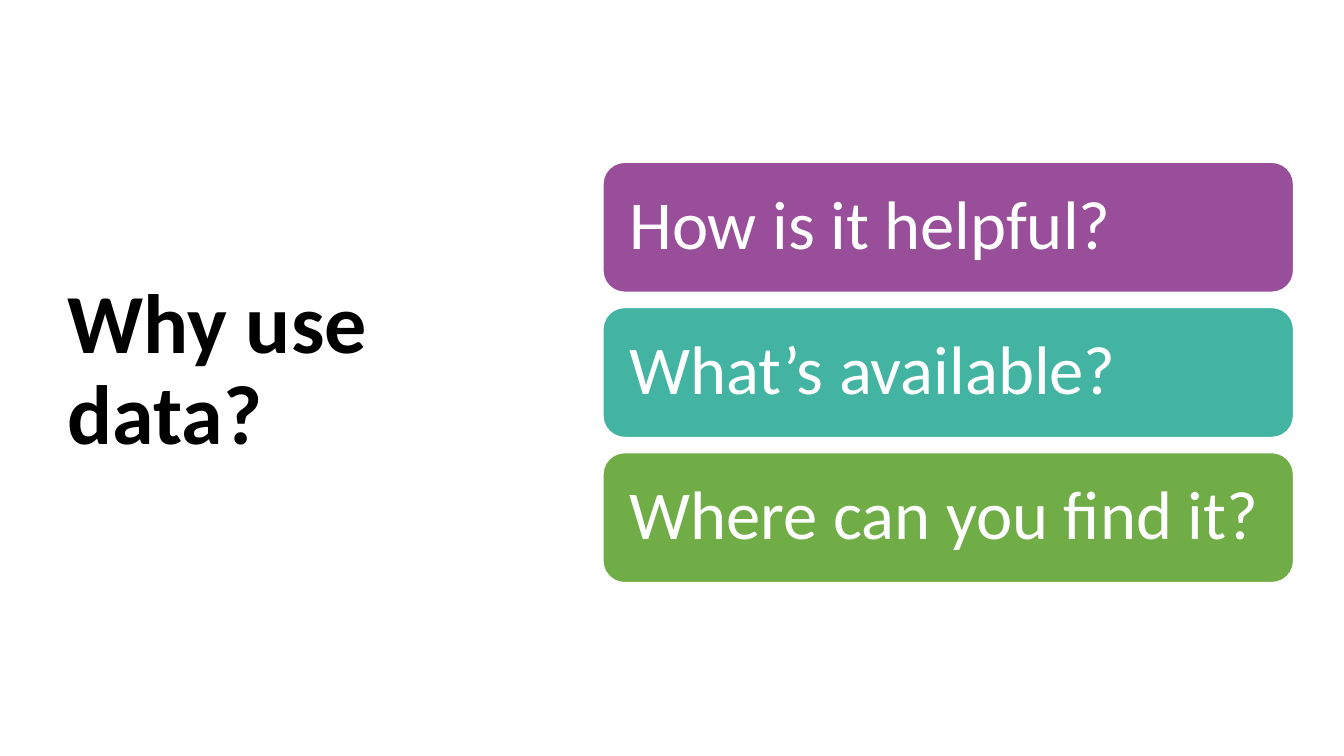
from pptx import Presentation
from pptx.dml.color import RGBColor
from pptx.enum.shapes import MSO_SHAPE as Shape
from pptx.enum.text import MSO_ANCHOR as Anchor, MSO_AUTO_SIZE as AutoSize, PP_ALIGN as Align
from pptx.util import Pt

EMU_PER_PX = 9144
FONT = "Calibri"
WHITE = "FFFFFF"
QUESTIONS = [
    ("How is it helpful?", "994E99"),
    ("What’s available?", "42B4A1"),
    ("Where can you find it?", "70AD47"),
]
CARD_LEFT, CARD_TOP, CARD_WIDTH, CARD_HEIGHT = 598, 161, 685, 129
CARD_PITCH = 144


def px(length):
    return length * EMU_PER_PX


def color(value):
    return RGBColor.from_string(value)


def write(frame, text, size, text_color, bold=False):
    frame.word_wrap = True
    frame.auto_size = AutoSize.NONE
    frame.vertical_anchor = Anchor.MIDDLE
    paragraph = frame.paragraphs[0]
    paragraph.text = text
    paragraph.alignment = Align.LEFT
    paragraph.line_spacing = 0.9
    font = paragraph.font
    font.name, font.size, font.bold = FONT, Pt(size), bold
    font.color.rgb = color(text_color)


def set_heading(slide, text):
    heading = slide.shapes.title
    heading.left, heading.top = px(57), px(68)
    heading.width, heading.height = px(416), px(602)
    write(heading.text_frame, text, 60, "000000", bold=True)


def add_question_card(slide, top, question, fill):
    card = slide.shapes.add_shape(
        Shape.ROUNDED_RECTANGLE, px(CARD_LEFT), px(top), px(CARD_WIDTH), px(CARD_HEIGHT)
    )
    card.shadow.inherit = False
    card.fill.solid()
    card.fill.fore_color.rgb = color(fill)
    card.line.color.rgb = color(WHITE)
    card.line.width = Pt(1)
    frame = card.text_frame
    frame.margin_left, frame.margin_right = px(20), px(10)
    write(frame, question, 49, WHITE)


def main():
    deck = Presentation()
    deck.slide_width, deck.slide_height = px(1333), px(750)
    slide = deck.slides.add_slide(deck.slide_layouts.get_by_name("Title Only"))
    set_heading(slide, "Why use data?")
    for index, (question, fill) in enumerate(QUESTIONS):
        add_question_card(slide, CARD_TOP + index * CARD_PITCH, question, fill)
    deck.save("out.pptx")


if __name__ == "__main__":
    main()
